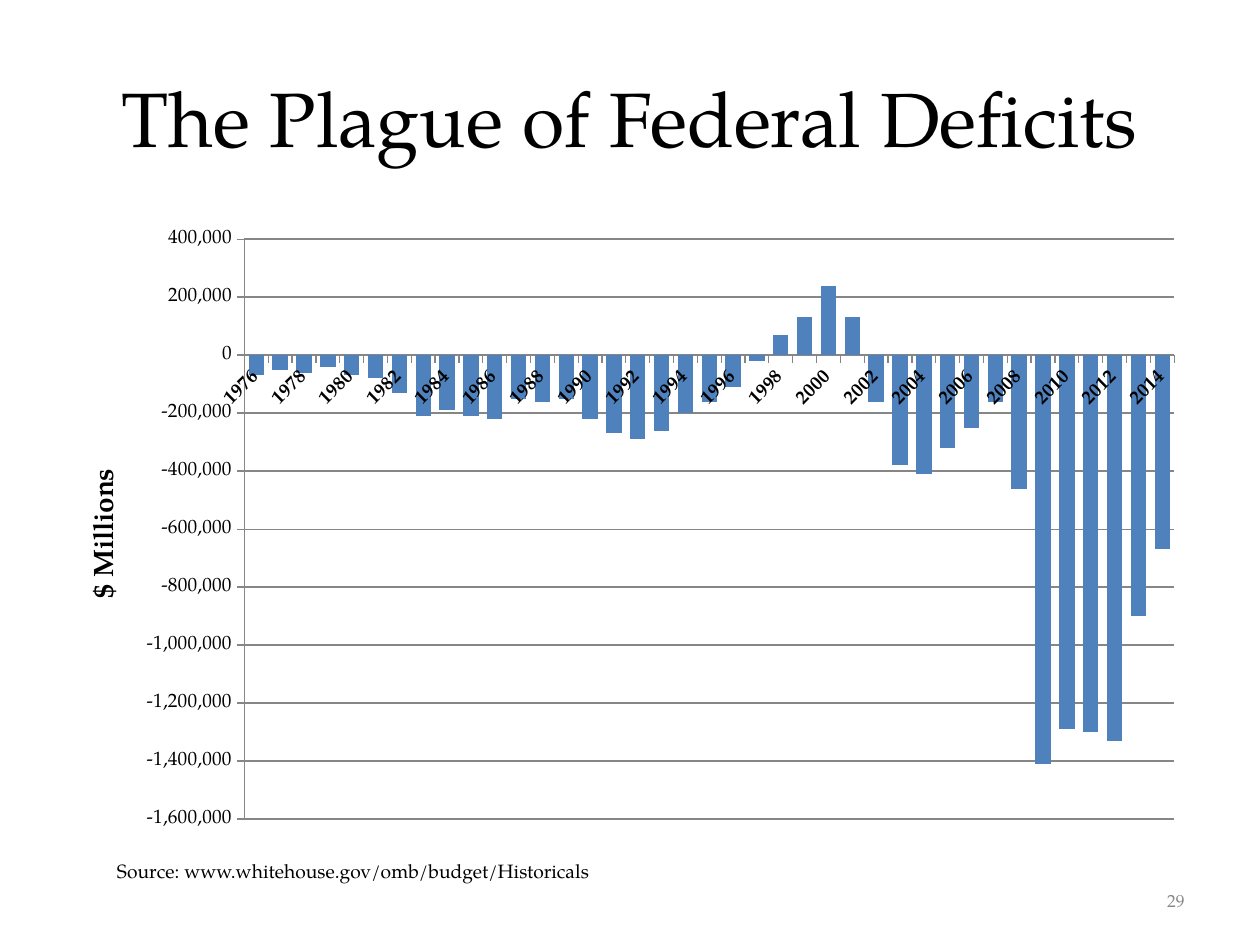
from pptx import Presentation
from pptx.chart.data import CategoryChartData
from pptx.dml.color import RGBColor
from pptx.enum.chart import XL_CHART_TYPE as ChartType, XL_TICK_MARK as TickMark
from pptx.enum.text import MSO_ANCHOR as Anchor, PP_ALIGN as Align
from pptx.oxml import parse_xml
from pptx.oxml.ns import nsdecls
from pptx.util import Emu, Pt

EMU_PER_PX = 9144
FONT = "TeX Gyre Pagella"
COLORS = {"text": "000000", "muted": "898989", "grid": "868686", "bar": "4F81BD"}
FIRST_YEAR = 1976
DEFICITS_THOUSANDS = [
    -70, -50, -60, -40, -70, -80, -130, -210, -190, -210, -220, -150, -160,
    -150, -220, -270, -290, -260, -200, -160, -110, -20, 70, 130, 240, 130,
    -160, -380, -410, -320, -250, -160, -460, -1410, -1290, -1300, -1330,
    -900, -670,
]


def px(length):
    return Emu(length * EMU_PER_PX)


def color(name):
    return RGBColor.from_string(COLORS[name])


def format_font(font, size, name="text", bold=False):
    font.name, font.size, font.bold = FONT, Pt(size), bold
    font.color.rgb = color(name)


def write_text(frame, text, size, name="text", bold=False, align=Align.LEFT,
               anchor=Anchor.TOP):
    frame.word_wrap = True
    frame.vertical_anchor = anchor
    paragraph = frame.paragraphs[0]
    paragraph.alignment = align
    run = paragraph.add_run()
    run.text = text
    format_font(run.font, size, name, bold)


def set_layout(parent, index, **fractions):
    for layout in parent.xpath("c:layout"):
        parent.remove(layout)
    target = '<c:layoutTarget val="inner"/>' if "w" in fractions else ""
    modes = '<c:xMode val="edge"/><c:yMode val="edge"/>'
    values = "".join(f'<c:{key} val="{value}"/>' for key, value in fractions.items())
    parent.insert(index, parse_xml(
        f'<c:layout {nsdecls("c")}><c:manualLayout>{target}{modes}{values}'
        "</c:manualLayout></c:layout>"))


class SlideBuilder:
    def __init__(self, slide):
        self.slide = slide

    def text(self, text, left, top, width, height, **style):
        box = self.slide.shapes.add_textbox(px(left), px(top), px(width), px(height))
        write_text(box.text_frame, text, **style)

    def column_chart(self, categories, values, value_title, left, top, width, height):
        data = CategoryChartData(number_format="#,##0")
        data.categories = categories
        data.add_series("Series 1", values)
        chart = self.slide.shapes.add_chart(
            ChartType.COLUMN_CLUSTERED, px(left), px(top), px(width), px(height), data).chart
        chart.has_legend = False
        chart.has_title = False
        format_font(chart.font, 11)
        self.style_columns(chart.plots[0])
        self.style_axes(chart, value_title)
        set_layout(chart.element.xpath(".//c:plotArea")[0], 0,
                   x=0.16, y=0.03, w=0.82, h=0.93)

    def style_columns(self, plot):
        plot.gap_width = 55
        plot.vary_by_categories = False
        series = plot.series[0]
        series.invert_if_negative = False
        series.format.fill.solid()
        series.format.fill.fore_color.rgb = color("bar")

    def style_axes(self, chart, value_title):
        years, amounts = chart.category_axis, chart.value_axis
        for axis, bold in ((years, True), (amounts, False)):
            axis.major_tick_mark = TickMark.OUTSIDE
            axis.minor_tick_mark = TickMark.NONE
            axis.format.line.color.rgb = color("grid")
            format_font(axis.tick_labels.font, 11, bold=bold)
        chart.element.xpath(".//c:catAx/c:txPr/a:bodyPr")[0].set("rot", "-2700000")
        chart.element.xpath(".//c:catAx/c:noMultiLvlLbl")[0].addprevious(
            parse_xml(f'<c:tickLblSkip {nsdecls("c")} val="2"/>'))

        amounts.minimum_scale, amounts.maximum_scale = -1600000, 400000
        amounts.major_unit = 200000
        amounts.tick_labels.number_format = "#,##0"
        amounts.tick_labels.number_format_is_linked = False
        amounts.has_major_gridlines = True
        amounts.major_gridlines.format.line.color.rgb = color("grid")
        write_text(amounts.axis_title.text_frame, value_title, size=16, bold=True,
                   align=Align.CENTER)
        title = chart.element.xpath(".//c:valAx/c:title")[0]
        title.xpath(".//a:bodyPr")[0].set("rot", "-5400000")
        set_layout(title, 1, x=0.02, y=0.39)


def main():
    presentation = Presentation()
    presentation.slide_width, presentation.slide_height = px(1000), px(750)
    builder = SlideBuilder(presentation.slides.add_slide(presentation.slide_layouts[6]))
    builder.text("The Plague of Federal Deficits", 50, 30, 900, 125,
                 size=44, align=Align.CENTER, anchor=Anchor.MIDDLE)
    years = [str(FIRST_YEAR + offset) for offset in range(len(DEFICITS_THOUSANDS))]
    builder.column_chart(years, [value * 1000 for value in DEFICITS_THOUSANDS],
                         "$ Millions", 50, 175, 900, 495)
    builder.text("Source: www.whitehouse.gov/omb/budget/Historicals", 83, 677, 508, 29,
                 size=11)
    builder.text("29", 717, 695, 233, 40, size=10, name="muted",
                 align=Align.RIGHT, anchor=Anchor.MIDDLE)
    presentation.save("out.pptx")


if __name__ == "__main__":
    main()
